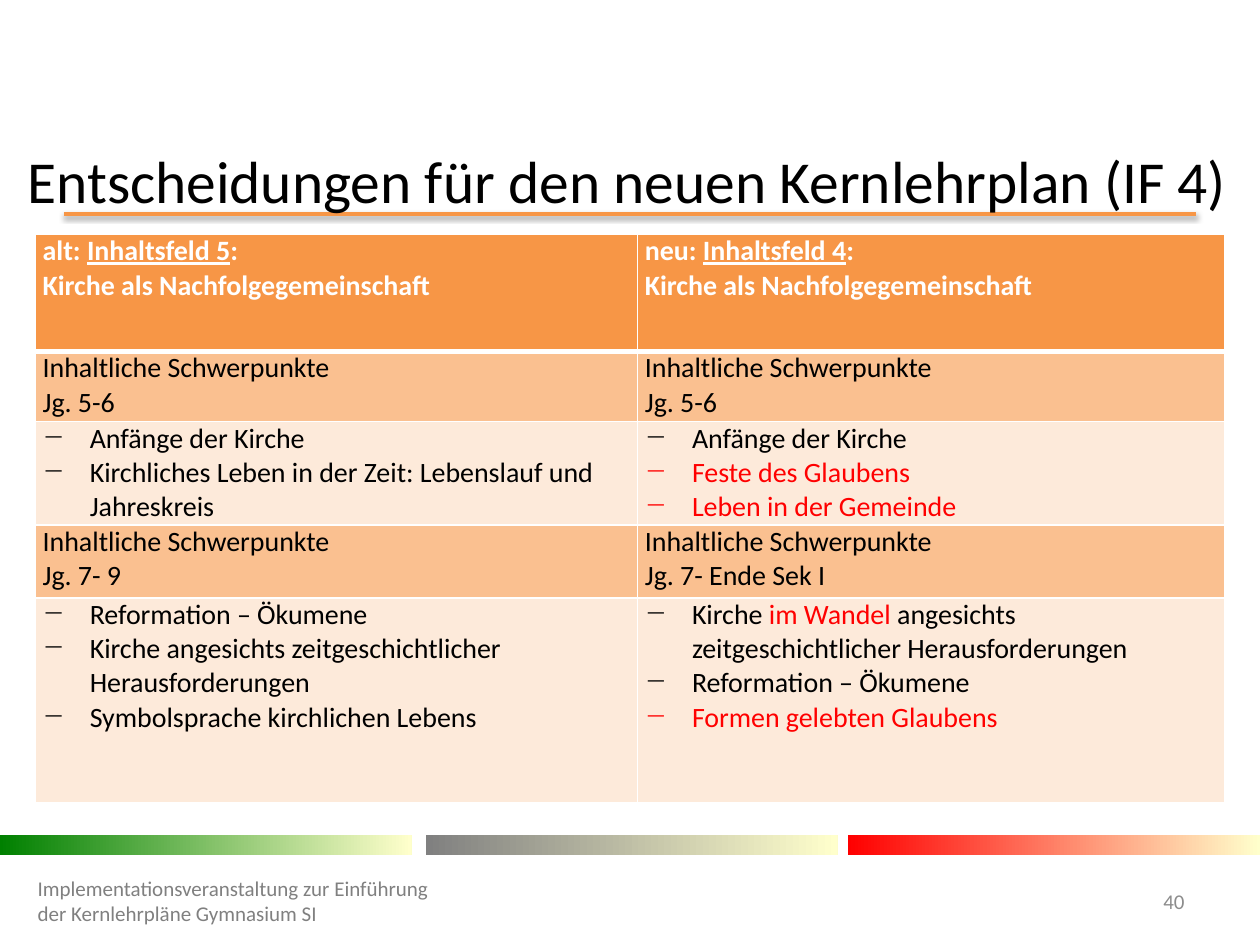
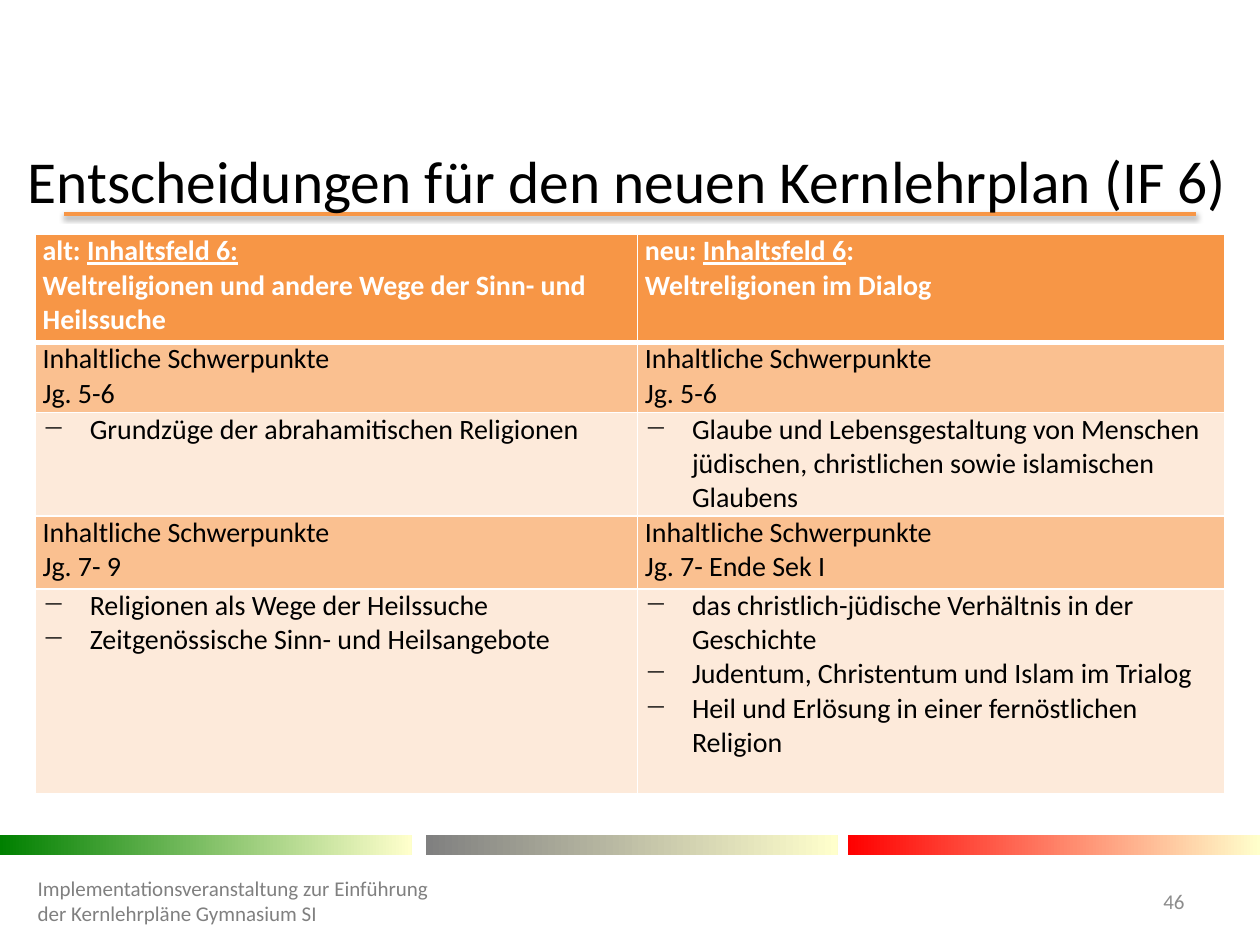
"""Build two slides that set the old curriculum beside the new one."""
from dataclasses import dataclass

from lxml.etree import SubElement as Sub
from pptx import Presentation
from pptx.dml.color import RGBColor as Rgb
from pptx.enum.shapes import MSO_CONNECTOR as Link, MSO_SHAPE as Form
from pptx.enum.text import MSO_ANCHOR as Anchor, MSO_AUTO_SIZE as Auto, PP_ALIGN as Align
from pptx.oxml.ns import qn
from pptx.util import Cm, Pt


@dataclass(frozen=True)
class Theme:
    font: str = "Calibri"
    title: int = 34
    body: int = 16
    small: int = 12
    black: str = "000000"
    white: str = "FFFFFF"
    red: str = "FF0000"
    head: str = "F79646"
    band: str = "FAC090"
    pale: str = "FDEADA"
    foot: str = "808080"
    page: str = "8C8C8C"
    fade: str = "FFFFCC"
    bars: tuple = ((0, "008000"), (8.59, "808080"), (17.1, "FF0000"))


class Deck:
    def __init__(self, theme):
        self.theme = theme
        self.show = Presentation()
        self.show.slide_width, self.show.slide_height = Cm(25.4), Cm(19.05)
        self.slide = None

    def add(self, title, page):
        self.slide = self.show.slides.add_slide(self.show.slide_layouts[5])
        self.rule()
        for left, tint in self.theme.bars:
            self.bar(left, tint)
        self.title(title)
        self.note((0.51, 17.65, 8.4, 1.02), FOOT, self.theme.foot)
        self.note((22.5, 17.65, 1.63, 1.02), page, self.theme.page, Align.RIGHT)

    def run(self, para, text, size, tint, bold=False, under=False):
        run = para.add_run()
        run.text = text
        font = run.font
        font.name, font.size = self.theme.font, Pt(size)
        font.bold, font.underline = bold, under
        font.color.rgb = Rgb.from_string(tint)

    def rule(self):
        line = self.slide.shapes.add_connector(
            Link.STRAIGHT, Cm(1.29), Cm(4.31), Cm(24.11), Cm(4.31))
        line.line.width = Pt(2)
        line.line.color.rgb = Rgb.from_string(self.theme.head)
        fx = Sub(line.element.spPr, qn("a:effectLst"))
        shade = Sub(fx, qn("a:outerShdw"), blurRad=str(Pt(3.1)),
                    dist=str(Pt(1.6)), dir="5400000", rotWithShape="0")
        ink = Sub(shade, qn("a:srgbClr"), val=self.theme.black)
        Sub(ink, qn("a:alpha"), val="38000")

    def bar(self, left, tint):
        bar = self.slide.shapes.add_shape(
            Form.RECTANGLE, Cm(left), Cm(16.84), Cm(8.3), Cm(0.4))
        bar.shadow.inherit = False
        bar.line.fill.background()
        bar.fill.gradient()
        bar.fill.gradient_angle = 0
        for stop, hue in zip(bar.fill.gradient_stops, (tint, self.theme.fade)):
            stop.color.rgb = Rgb.from_string(hue)

    def frame(self, box, text, size, tint, align):
        frame = box.text_frame
        frame.word_wrap, frame.auto_size = True, Auto.NONE
        frame.vertical_anchor = Anchor.MIDDLE
        para = frame.paragraphs[0]
        para.alignment = align
        self.run(para, text, size, tint)

    def title(self, text):
        box = self.slide.shapes.title
        box.left, box.top, box.width, box.height = map(Cm, (0.3, 3.12, 24.8, 1))
        self.frame(box, text, self.theme.title, self.theme.black, Align.LEFT)
        box.element.getparent().append(box.element)

    def note(self, place, text, tint, align=Align.LEFT):
        box = self.slide.shapes.add_textbox(*map(Cm, place))
        self.frame(box, text, self.theme.small, tint, align)

    def edge(self, cell, side, width):
        line = Sub(cell._tc.get_or_add_tcPr(), qn(f"a:ln{side}"), w=str(Pt(width)))
        fill = Sub(line, qn("a:solidFill"))
        Sub(fill, qn("a:srgbClr"), val=self.theme.white)

    def cell(self, cell, paras, kind):
        theme = self.theme
        head, list_ = kind == "head", kind == "pale"
        for side in "LRTB":
            self.edge(cell, side, 3 if head and side == "B" else 1)
        cell.fill.solid()
        cell.fill.fore_color.rgb = Rgb.from_string(getattr(theme, kind))
        cell.margin_left = cell.margin_right = Cm(0.15)
        cell.margin_top = cell.margin_bottom = 0
        for num, runs in enumerate(paras):
            frame = cell.text_frame
            para = frame.add_paragraph() if num else frame.paragraphs[0]
            if list_:
                props = para._p.get_or_add_pPr()
                props.set("marL", str(Cm(0.95)))
                props.set("indent", str(-Cm(0.95)))
                Sub(props, qn("a:buChar"), char="−")
            for text, mark in runs:
                tint = theme.white if head else theme.red if mark == "red" else theme.black
                self.run(para, text, theme.body, tint, head, mark == "under")

    def table(self, rows, top):
        tall = (top, 1.42, 2.08, 1.47, 4.14)
        wide = (12.14, 11.84)
        grid = self.slide.shapes.add_table(
            len(tall), len(wide), Cm(0.71), Cm(4.72), Cm(sum(wide)), Cm(sum(tall))).table
        grid.horz_banding = False
        for col, width in zip(grid.columns, wide):
            col.width = Cm(width)
        kinds = ("head", "band", "pale", "band", "pale")
        for row, height, kind, cells in zip(grid.rows, tall, kinds, rows):
            row.height = Cm(height)
            for cell, paras in zip(row.cells, cells):
                self.cell(cell, paras, kind)


def plain(*lines):
    return [[(line, "")] for line in lines]


def red(*lines):
    return [[(line, "red")] for line in lines]


def head(age, field, end, topic):
    return [[(age, ""), (field, "under"), (end, "")]] + plain(topic)


def focus(*years):
    return [plain("Inhaltliche Schwerpunkte", year) for year in years]


FOOT = "Implementationsveranstaltung zur Einführung der Kernlehrpläne Gymnasium SI"
EARLY = focus("Jg. 5-6", "Jg. 5-6")
LATE = focus("Jg. 7- 9", "Jg. 7- Ende Sek I")
CHURCH = "Kirche als Nachfolgegemeinschaft"

FOUR = [
    [head("alt: ", "Inhaltsfeld 5", ":", CHURCH),
     head("neu: ", "Inhaltsfeld 4", ":", CHURCH)],
    EARLY,
    [plain("Anfänge der Kirche",
           "Kirchliches Leben in der Zeit: Lebenslauf und Jahreskreis"),
     plain("Anfänge der Kirche") + red("Feste des Glaubens", "Leben in der Gemeinde")],
    LATE,
    [plain("Reformation – Ökumene",
           "Kirche angesichts zeitgeschichtlicher Herausforderungen",
           "Symbolsprache kirchlichen Lebens"),
     [[("Kirche ", ""), ("im Wandel ", "red"),
       ("angesichts zeitgeschichtlicher Herausforderungen", "")]]
     + plain("Reformation – Ökumene") + red("Formen gelebten Glaubens")],
]

SIX = [
    [head("alt: ", "Inhaltsfeld 6:", "",
          "Weltreligionen und andere Wege der Sinn- und Heilssuche"),
     head("neu: ", "Inhaltsfeld 6", ":", "Weltreligionen im Dialog")],
    EARLY,
    [plain("Grundzüge der abrahamitischen Religionen"),
     plain("Glaube und Lebensgestaltung von Menschen jüdischen, "
           "christlichen sowie islamischen Glaubens")],
    LATE,
    [plain("Religionen als Wege der Heilssuche",
           "Zeitgenössische Sinn- und Heilsangebote"),
     plain("das christlich-jüdische Verhältnis in der Geschichte",
           "Judentum, Christentum und Islam im Trialog",
           "Heil und Erlösung in einer fernöstlichen Religion")],
]


def main():
    deck = Deck(Theme())
    for field, page, rows, top in ((4, "40", FOUR, 2.36), (6, "46", SIX, 2.18)):
        deck.add(f"Entscheidungen für den neuen Kernlehrplan (IF {field})", page)
        deck.table(rows, top)
    deck.show.save("out.pptx")


if __name__ == "__main__":
    main()
